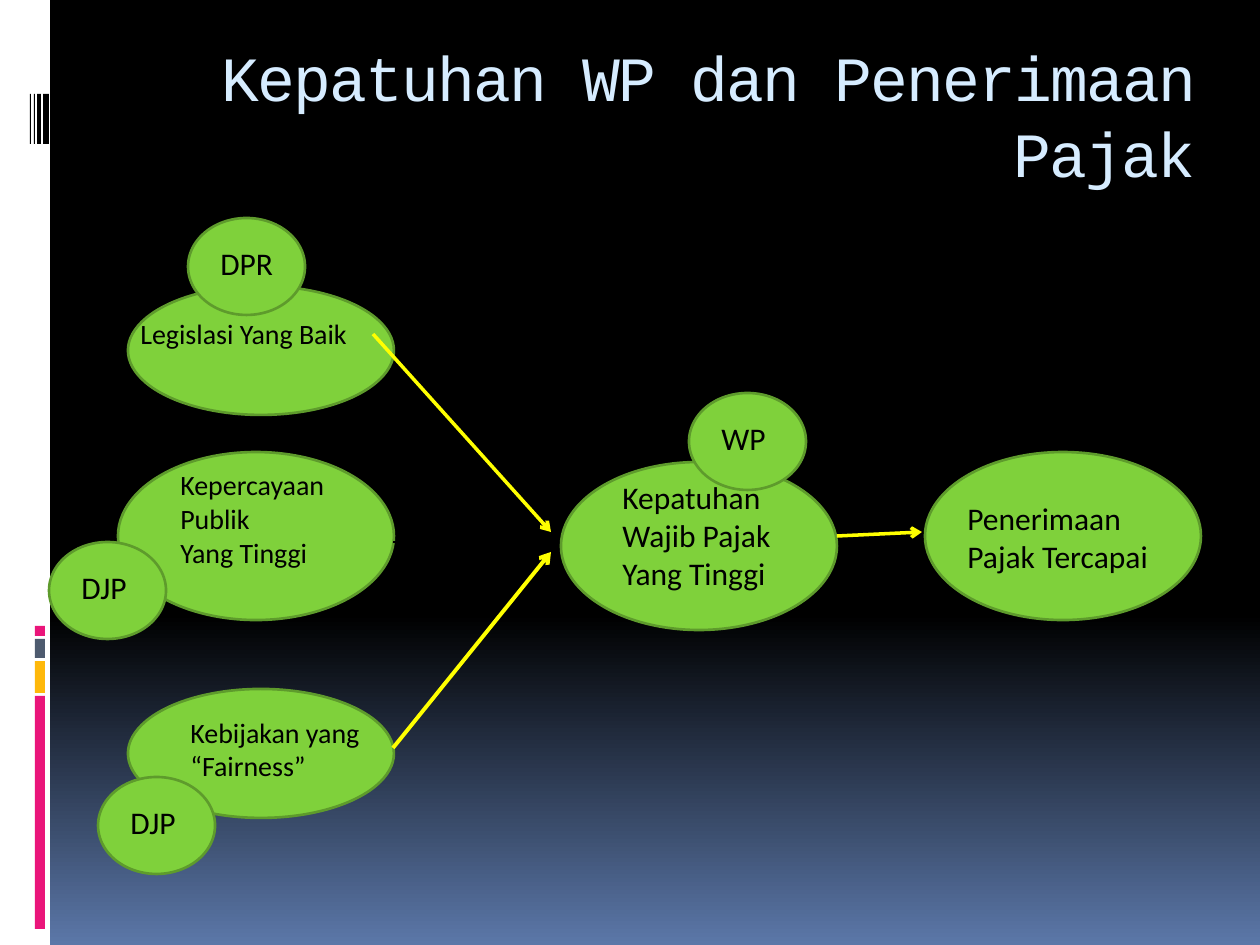
from dataclasses import dataclass

from lxml.etree import SubElement
from pptx import Presentation
from pptx.dml.color import RGBColor
from pptx.enum.shapes import MSO_CONNECTOR as Connector, MSO_SHAPE as Shape
from pptx.enum.text import MSO_ANCHOR as Anchor, PP_ALIGN as Align
from pptx.oxml.ns import qn
from pptx.util import Emu, Pt

PX_PER_INCH = 126


def px(length):
    return Emu(round(length * 914400 / PX_PER_INCH))


@dataclass(frozen=True)
class Theme:
    black: str = "000000"
    white: str = "FFFFFF"
    horizon: str = "5B77A8"
    pink: str = "EA157A"
    amber: str = "FEB80A"
    slate: str = "4E5B6F"
    title: str = "D6ECFF"
    green: str = "7FD13B"
    outline: str = "5E9B2C"
    yellow: str = "FFFF00"
    title_font: str = "Courier New"
    body_font: str = "Calibri"
    title_size: int = 36
    large_size: int = 18
    small_size: int = 16


def write_text(frame, text, *, font, size, color, align=Align.LEFT,
               line_height=None, tracking=None):
    for index, line in enumerate(text.split("\n")):
        paragraph = frame.paragraphs[0] if index == 0 else frame.add_paragraph()
        paragraph.alignment = align
        if line_height:
            paragraph.line_spacing = Pt(line_height)
        run = paragraph.add_run()
        run.text = line
        run.font.name = font
        run.font.size = Pt(size)
        run.font.color.rgb = RGBColor.from_string(color)
        if tracking:
            run.font._element.set("spc", str(tracking * 100))


class SlideBuilder:
    def __init__(self, slide, theme):
        self.slide = slide
        self.theme = theme

    def background(self):
        fill = self.slide.background.fill
        fill.gradient()
        fill.gradient_angle = 270
        stops = ((0.65, self.theme.black), (1, self.theme.horizon))
        for stop, (position, color) in zip(fill.gradient_stops, stops):
            stop.position = position
            stop.color.rgb = RGBColor.from_string(color)

    def shape(self, kind, box, color, outline=None):
        shape = self.slide.shapes.add_shape(kind, *map(px, box))
        shape.shadow.inherit = False
        shape.fill.solid()
        shape.fill.fore_color.rgb = RGBColor.from_string(color)
        if outline:
            shape.line.color.rgb = RGBColor.from_string(outline)
            shape.line.width = Pt(1.5)
        else:
            shape.line.fill.background()

    def bar(self, box, color):
        self.shape(Shape.RECTANGLE, box, color)

    def ellipse(self, box):
        self.shape(Shape.OVAL, box, self.theme.green, self.theme.outline)

    def text(self, box, text, top_inset=6, **style):
        frame = self.slide.shapes.add_textbox(*map(px, box)).text_frame
        frame.word_wrap = True
        frame.vertical_anchor = Anchor.TOP
        frame.margin_top = px(top_inset)
        write_text(frame, text, **style)

    def label(self, box, text, size):
        self.text(box, text, font=self.theme.body_font, size=size,
                  color=self.theme.black)

    def actor(self, left, top, name):
        self.ellipse((left, top, 117, 97))
        self.label((left + 20, top + 20, 83, 50), name, self.theme.large_size)

    def arrow(self, start, end, color, width):
        connector = self.slide.shapes.add_connector(
            Connector.STRAIGHT, *map(px, start + end))
        connector.line.color.rgb = RGBColor.from_string(color)
        connector.line.width = Pt(width)
        SubElement(connector.line._get_or_add_ln(), qn("a:tailEnd"), type="arrow")
        SubElement(connector._element.spPr, qn("a:effectLst"))


def main():
    theme = Theme()
    presentation = Presentation()
    presentation.slide_width = px(1260)
    presentation.slide_height = px(945)
    slide = presentation.slides.add_slide(presentation.slide_layouts[6])
    builder = SlideBuilder(slide, theme)

    builder.background()
    builder.bar((0, 0, 50, 945), theme.white)
    for top, height, color in ((696, 233, theme.pink), (661, 32, theme.amber),
                               (639, 19, theme.slate), (626, 10, theme.pink)):
        builder.bar((35, top, 10, height), color)
    for left, width in ((43, 6), (37, 4), (34, 1), (30, 1)):
        builder.bar((left, 94, width, 50), theme.black)

    builder.text((84, 24, 1124, 95), "Kepatuhan WP dan Penerimaan Pajak",
                 top_inset=14, font=theme.title_font, size=theme.title_size,
                 color=theme.title, align=Align.RIGHT, line_height=43.4,
                 tracking=-1)

    causes = (
        ((128, 286, 266, 129), (128, 311, 244, 47), "Legislasi Yang Baik"),
        ((118, 452, 276, 168), (168, 462, 239, 118),
         "Kepercayaan Publik\nYang Tinggi"),
        ((128, 689, 266, 129), (178, 709, 210, 81),
         "Kebijakan yang\n“Fairness”"),
    )
    for ellipse_box, text_box, text in causes:
        builder.ellipse(ellipse_box)
        builder.label(text_box, text, theme.small_size)

    builder.arrow((373, 334), (551, 532), theme.yellow, 2)
    builder.arrow((393, 542), (551, 542), theme.black, 0.94)
    builder.arrow((393, 748), (551, 552), theme.yellow, 2.25)

    builder.ellipse((561, 462, 276, 168))
    builder.label((610, 472, 239, 127), "Kepatuhan\nWajib Pajak\nYang Tinggi",
                  theme.large_size)
    for left, top, name in ((689, 393, "WP"), (49, 542, "DJP"),
                            (98, 777, "DJP"), (188, 218, "DPR")):
        builder.actor(left, top, name)

    builder.ellipse((925, 452, 276, 168))
    builder.label((955, 493, 239, 89), "Penerimaan\nPajak Tercapai",
                  theme.large_size)
    builder.arrow((837, 536), (922, 532), theme.yellow, 2)

    presentation.save("out.pptx")


if __name__ == "__main__":
    main()
